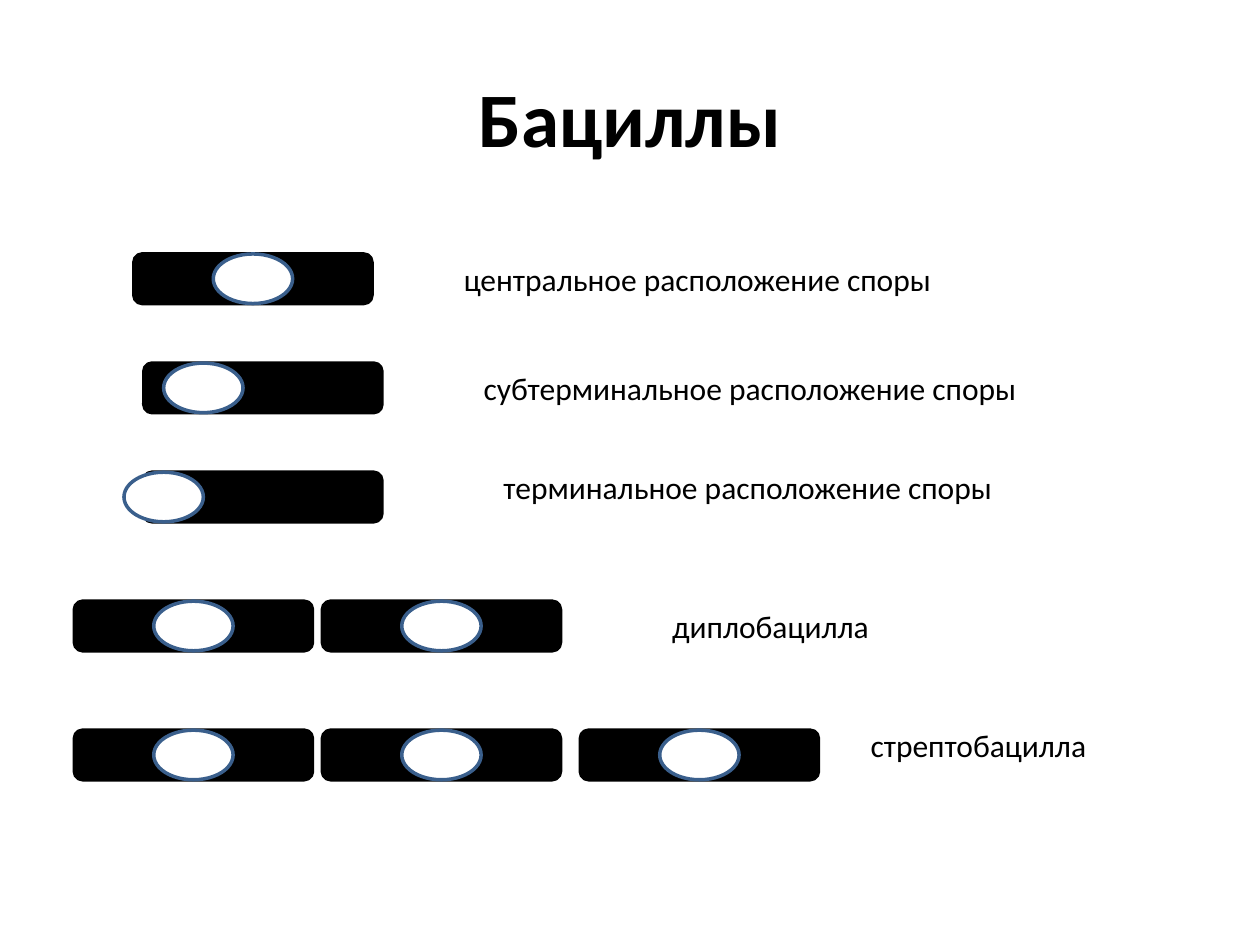
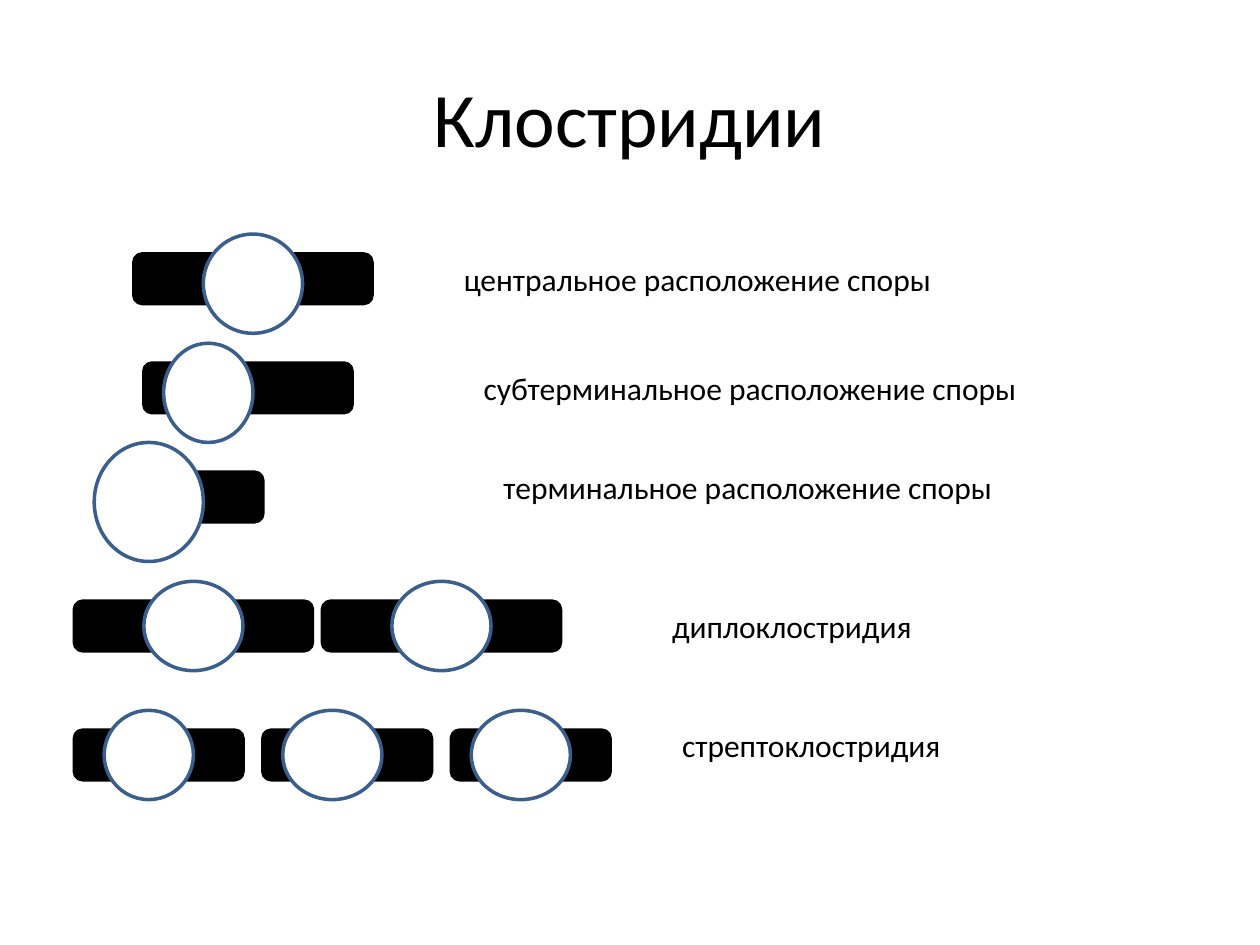
"""Build two slides on spore placement in bacilli and clostridia."""
from pptx import Presentation
from pptx.dml.color import RGBColor
from pptx.enum.shapes import MSO_SHAPE
from pptx.enum.text import MSO_ANCHOR, MSO_AUTO_SIZE, PP_ALIGN
from pptx.util import Cm, Pt

ROD = MSO_SHAPE.ROUNDED_RECTANGLE
SPORE = MSO_SHAPE.OVAL
GROW = MSO_AUTO_SIZE.SHAPE_TO_FIT_TEXT
MIDDLE = MSO_ANCHOR.MIDDLE
CENTER = PP_ALIGN.CENTER
LEFT = PP_ALIGN.LEFT
TITLE_ONLY = 5

COLORS = {"black": "000000", "white": "FFFFFF", "outline": "3A5F8C"}
TITLE_FONT = {"name": "Calibri", "size": Pt(44)}
LABEL_FONT = {"name": "Calibri", "size": Pt(18), "bold": False}

TITLE_BOX = (1.27, 0.76, 22.86, 3.18)
ROD_HEIGHT = 1.0
LABEL_HEIGHT = 1.03
LINE_WIDTH = 2
ROW_TOPS = (5.12, 7.32, 9.52, 12.12, 14.72)
LABEL_TOPS = (5.12, 7.32, 9.32, 12.12, 14.52)
PLACEMENTS = (
    ("центральное расположение споры", 9.1, 10.06),
    ("субтерминальное расположение споры", 9.5, 11.38),
    ("терминальное расположение споры", 9.9, 10.49),
)

# Labels: text, left, width. Rows: spore height, spore rise,
# cells as rod left, rod width, spore offset, spore width.
SLIDES = (
    {
        "title": "Бациллы",
        "bold": True,
        "labels": PLACEMENTS + (("диплобацилла", 13.3, 4.52), ("стрептобацилла", 17.3, 4.9)),
        "rows": (
            (1.0, 0, [(2.7, 4.8, 1.6, 1.6)]),
            (1.0, 0, [(2.9, 4.8, 0.4, 1.6)]),
            (1.0, 0, [(2.9, 4.8, -0.4, 1.6)]),
            (1.0, 0, [(left, 4.8, 1.6, 1.6) for left in (1.5, 6.5)]),
            (1.0, 0, [(left, 4.8, 1.6, 1.6) for left in (1.5, 6.5, 11.7)]),
        ),
    },
    {
        "title": "Клостридии",
        "bold": False,
        "labels": PLACEMENTS + (("диплоклостридия", 13.3, 5.38), ("стрептоклостридия", 13.5, 5.79)),
        "rows": (
            (2.0, 0.4, [(2.7, 4.8, 1.4, 2.0)]),
            (2.0, 0.4, [(2.9, 4.2, 0.4, 1.8)]),
            (2.4, 0.6, [(2.9, 2.4, -1.0, 2.2)]),
            (1.8, 0.4, [(left, 4.8, 1.4, 2.0) for left in (1.5, 6.5)]),
            (1.8, 0.4, [(1.5, 3.4, 0.6, 1.8), (5.3, 3.4, 0.4, 2.0), (9.1, 3.2, 0.4, 2.0)]),
        ),
    },
)


def color(name):
    return RGBColor.from_string(COLORS[name])


def set_text(frame, text, values, alignment):
    paragraph = frame.paragraphs[0]
    paragraph.alignment = alignment
    span = paragraph.add_run()
    span.text = text
    for name, value in values.items():
        setattr(span.font, name, value)
    span.font.color.rgb = color("black")


def add_title(page, text, bold):
    title = page.shapes.title
    for name, value in zip(("left", "top", "width", "height"), TITLE_BOX):
        setattr(title, name, Cm(value))
    title.text_frame.vertical_anchor = MIDDLE
    set_text(title.text_frame, text, {**TITLE_FONT, "bold": bold}, CENTER)


def add_part(group, kind, bounds, fill, line):
    part = group.shapes.add_shape(kind, *map(Cm, bounds))
    part.shadow.inherit = False
    part.fill.solid()
    part.fill.fore_color.rgb = color(fill)
    part.line.color.rgb = color(line)
    part.line.width = Pt(LINE_WIDTH)


def add_row(page, top, spore_height, rise, cells):
    for left, width, offset, spore_width in cells:
        cell = page.shapes.add_group_shape()
        add_part(cell, ROD, (left, top, width, ROD_HEIGHT), "black", "black")
        spore = (left + offset, top - rise, spore_width, spore_height)
        add_part(cell, SPORE, spore, "white", "outline")


def add_label(page, top, text, left, width):
    box = page.shapes.add_textbox(*map(Cm, (left, top, width, LABEL_HEIGHT)))
    box.text_frame.word_wrap = False
    box.text_frame.auto_size = GROW
    set_text(box.text_frame, text, LABEL_FONT, LEFT)


def main():
    deck = Presentation()
    deck.slide_width, deck.slide_height = Cm(25.4), Cm(19.05)
    for content in SLIDES:
        page = deck.slides.add_slide(deck.slide_layouts[TITLE_ONLY])
        add_title(page, content["title"], content["bold"])
        for top, row in zip(ROW_TOPS, content["rows"]):
            add_row(page, top, *row)
        for top, label in zip(LABEL_TOPS, content["labels"]):
            add_label(page, top, *label)
    deck.save("out.pptx")


if __name__ == "__main__":
    main()
